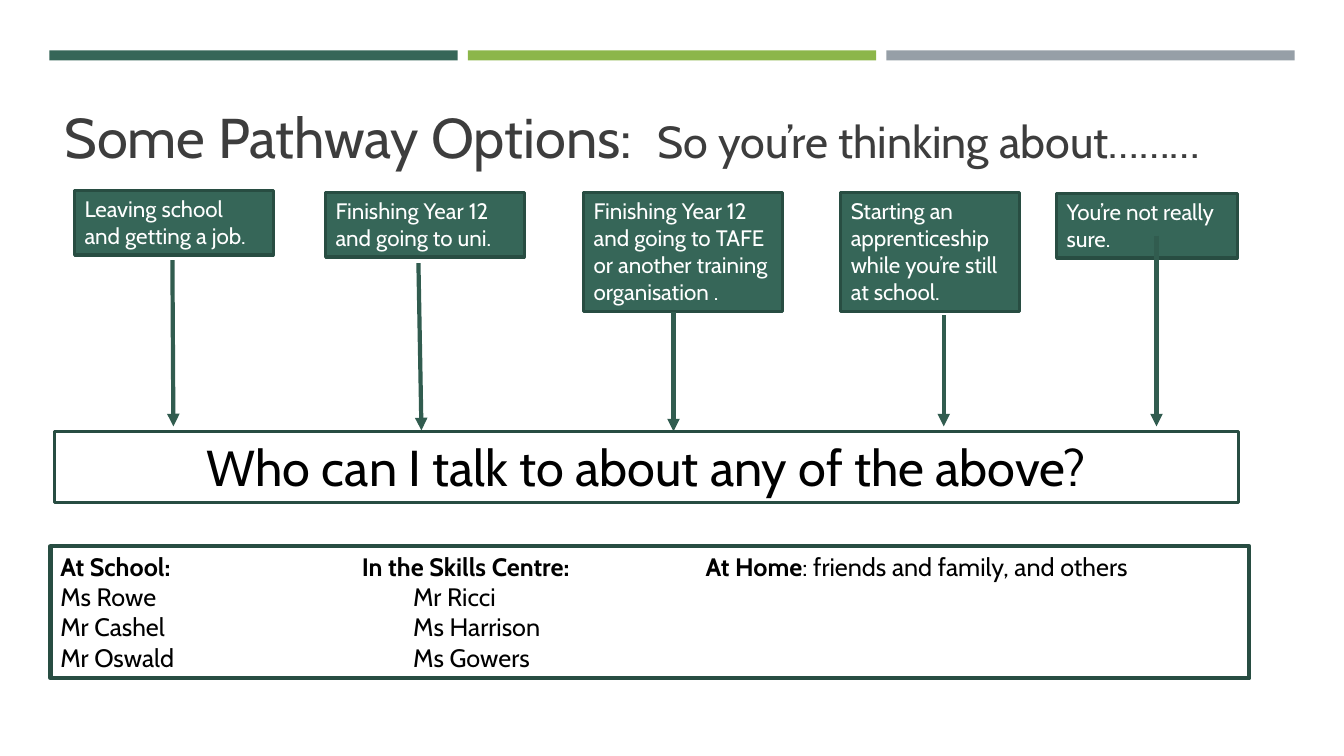
"""Build the school pathway options slide."""
from dataclasses import dataclass
from typing import NamedTuple, Optional

from lxml.etree import SubElement
from pptx import Presentation
from pptx.dml.color import RGBColor
from pptx.enum.shapes import MSO_CONNECTOR as Connector, MSO_SHAPE as Preset
from pptx.enum.text import MSO_ANCHOR as Anchor, PP_ALIGN as Align
from pptx.oxml.ns import qn
from pptx.shapes.autoshape import Shape
from pptx.slide import Slide
from pptx.util import Inches, Pt


@dataclass(frozen=True)
class Theme:
    """Colours, font and point sizes of the slide."""
    green: str = "366658"
    lime: str = "8CB64A"
    grey: str = "969FA7"
    border: str = "284D42"
    arrow: str = "315C4F"
    title: str = "3D3D3D"
    black: str = "000000"
    white: str = "FFFFFF"
    font: str = "Cabin"
    title_size: int = 40
    subtitle_size: int = 32
    question_size: int = 36
    contact_size: int = 18
    pathway_size: int = 16
    thin: float = 2.25
    thick: float = 3


class Area(NamedTuple):
    """Place and size in inches."""
    left: float
    top: float
    width: float
    height: float


class Pathway(NamedTuple):
    """A pathway box with the ends of its arrow."""
    text: str
    area: Area
    start: tuple[float, float]
    end: tuple[float, float]


class ContactRow(NamedTuple):
    """A line of contacts with its tab stops in inches."""
    text: str
    tabs: tuple[float, ...]
    bold: bool = False
    plain_ending: str = ""


THEME = Theme()
BARS = (THEME.green, THEME.lime, THEME.grey)
BAR_LEFT, BAR_STEP = 0.49, 4.15
PATHWAYS = (
    Pathway("Leaving school and getting a job.",
            Area(0.74, 1.89, 1.97, 0.64), (1.71, 2.58), (1.72, 4.23)),
    Pathway("Finishing Year 12 and going to uni.",
            Area(3.23, 1.91, 1.97, 0.64), (4.15, 2.61), (4.18, 4.27)),
    Pathway("Finishing Year 12 and going to TAFE or another training organisation .",
            Area(5.79, 1.91, 1.97, 1.18), (6.68, 3.1), (6.68, 4.28)),
    Pathway("Starting an apprenticeship while you’re still at school.",
            Area(8.34, 1.91, 1.77, 1.18), (9.36, 3.13), (9.36, 4.23)),
    Pathway("You’re not really sure.",
            Area(10.48, 1.92, 1.79, 0.64), (11.47, 2.34), (11.47, 4.23)),
)
NAME_TABS = (3.5,)
CONTACTS = (
    ContactRow("At School:\tIn the Skills Centre:\tAt Home", (2.99, 6.4), True,
               ": friends and family, and others"),
    ContactRow("Ms Rowe\tMr Ricci", NAME_TABS),
    ContactRow("Mr Cashel\tMs Harrison", NAME_TABS),
    ContactRow("Mr Oswald\tMs Gowers", NAME_TABS),
)


def colour(value: str) -> RGBColor:
    """Turn a hex value into a colour."""
    return RGBColor.from_string(value)


def style_run(run, size: float, ink: str, bold: bool = False) -> None:
    """Format one run of text."""
    run.font.name = THEME.font
    run.font.size = Pt(size)
    run.font.bold = bold
    run.font.color.rgb = colour(ink)


def add_box(slide: Slide, area: Area, fill: Optional[str] = None,
            border: Optional[str] = None, weight: float = THEME.thin) -> Shape:
    """Draw a rectangle with optional fill and border."""
    box = slide.shapes.add_shape(Preset.RECTANGLE, *map(Inches, area))
    box.shadow.inherit = False
    if fill:
        box.fill.solid()
        box.fill.fore_color.rgb = colour(fill)
    else:
        box.fill.background()
    if border:
        box.line.color.rgb = colour(border)
        box.line.width = Pt(weight)
    else:
        box.line.fill.background()
    return box


def write(box: Shape, text: str, size: float, ink: str, align: Align = Align.LEFT) -> None:
    """Put a single paragraph in a box."""
    frame = box.text_frame
    frame.word_wrap = True
    frame.vertical_anchor = Anchor.TOP
    frame.text = text
    frame.paragraphs[0].alignment = align
    style_run(frame.paragraphs[0].runs[0], size, ink)


def add_title(slide: Slide) -> None:
    """Write the title and its smaller ending."""
    title = slide.shapes.add_textbox(*map(Inches, Area(0.54, 0.93, 12.29, 1.38)))
    write(title, "Some Pathway Options:  ", THEME.title_size, THEME.title)
    title.text_frame.margin_top = Inches(0.09)
    subtitle = title.text_frame.paragraphs[0].add_run()
    subtitle.text = "So you’re thinking about………"
    style_run(subtitle, THEME.subtitle_size, THEME.title)


def add_arrow(slide: Slide, start: tuple[float, float], end: tuple[float, float]) -> None:
    """Draw an arrow without shadow."""
    arrow = slide.shapes.add_connector(Connector.STRAIGHT, *map(Inches, start + end))
    arrow.line.color.rgb = colour(THEME.arrow)
    arrow.line.width = Pt(THEME.thick)
    SubElement(arrow.line._get_or_add_ln(), qn("a:tailEnd"), type="triangle")
    SubElement(arrow._element.spPr, qn("a:effectLst"))


def add_contacts(slide: Slide) -> None:
    """Draw the contact box with its tabbed columns."""
    box = add_box(slide, Area(0.5, 5.42, 11.89, 1.31), border=THEME.border, weight=THEME.thick)
    frame = box.text_frame
    frame.word_wrap = True
    frame.vertical_anchor = Anchor.TOP
    frame.text = "\n".join(row.text for row in CONTACTS)
    for row, paragraph in zip(CONTACTS, frame.paragraphs):
        paragraph.alignment = Align.LEFT
        tab_list = SubElement(paragraph._p.get_or_add_pPr(), qn("a:tabLst"))
        for stop in row.tabs:
            SubElement(tab_list, qn("a:tab"), pos=str(Inches(stop)), algn="l")
        for run in paragraph.runs:
            style_run(run, THEME.contact_size, THEME.black, row.bold)
        if row.plain_ending:
            ending = paragraph.add_run()
            ending.text = row.plain_ending
            style_run(ending, THEME.contact_size, THEME.black)


def main() -> None:
    """Build and save the slide."""
    deck = Presentation()
    deck.slide_width, deck.slide_height = Inches(13.33), Inches(7.5)
    slide = deck.slides.add_slide(deck.slide_layouts[6])
    for column, fill in enumerate(BARS):
        add_box(slide, Area(BAR_LEFT + column * BAR_STEP, 0.5, 4.05, 0.1), fill)
    add_title(slide)
    for pathway in PATHWAYS:
        option = add_box(slide, pathway.area, THEME.green, THEME.border)
        write(option, pathway.text, THEME.pathway_size, THEME.white)
        add_arrow(slide, pathway.start, pathway.end)
    question = add_box(slide, Area(0.54, 4.28, 11.74, 0.71), border=THEME.border)
    write(question, "Who can I talk to about any of the above?",
          THEME.question_size, THEME.black, Align.CENTER)
    add_contacts(slide)
    deck.save("out.pptx")


if __name__ == "__main__":
    main()
